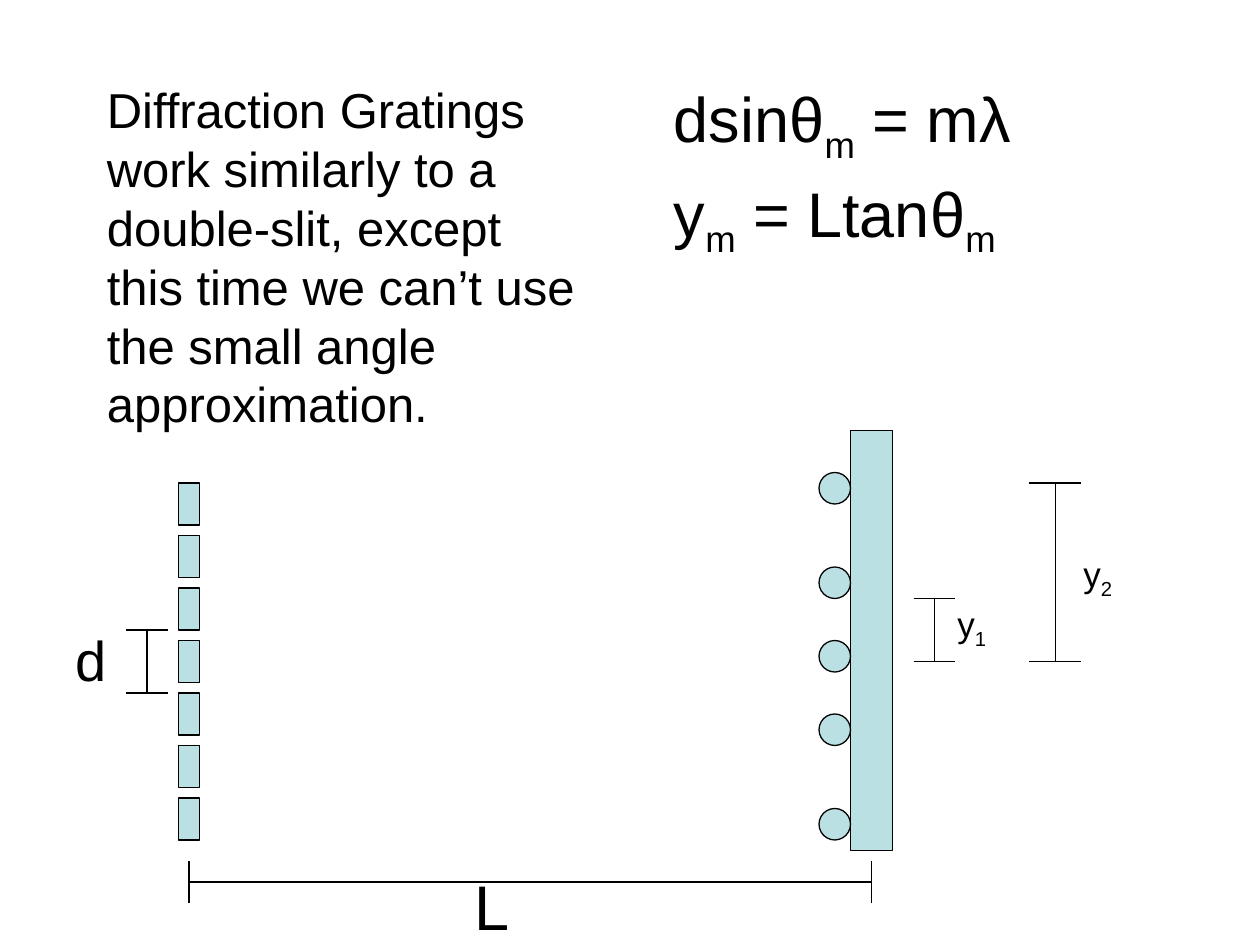
from lxml import etree
from pptx import Presentation
from pptx.dml.color import RGBColor
from pptx.enum.shapes import MSO_CONNECTOR, MSO_SHAPE
from pptx.enum.text import MSO_AUTO_SIZE
from pptx.oxml.ns import qn
from pptx.util import Pt

PX = 7620
BLACK = RGBColor(0x00, 0x00, 0x00)
PALE_TEAL = RGBColor(0xBB, 0xE0, 0xE3)
RECTANGLE = MSO_SHAPE.RECTANGLE
OVAL = MSO_SHAPE.OVAL
STRAIGHT = MSO_CONNECTOR.STRAIGHT
FIT_SHAPE = MSO_AUTO_SIZE.SHAPE_TO_FIT_TEXT


def add_text(box, size, runs):
    text_box = slide.shapes.add_textbox(*[value * PX for value in box])
    frame = text_box.text_frame
    frame.word_wrap = True
    frame.auto_size = FIT_SHAPE
    paragraph = frame.paragraphs[0]
    space_before = etree.SubElement(paragraph._p.get_or_add_pPr(), qn("a:spcBef"))
    etree.SubElement(space_before, qn("a:spcPct")).set("val", "50000")
    for text, is_subscript in runs:
        run = paragraph.add_run()
        run.text = text
        run.font.name = "Arial"
        run.font.size = Pt(size)
        run.font.color.rgb = BLACK
        if is_subscript:
            run.font._element.set("baseline", "-25000")


def add_body(kind, left, top, width, height):
    shape = slide.shapes.add_shape(kind, left * PX, top * PX, width * PX, height * PX)
    shape.shadow.inherit = False
    shape.fill.solid()
    shape.fill.fore_color.rgb = PALE_TEAL
    shape.line.color.rgb = BLACK
    shape.line.width = Pt(0.75)


presentation = Presentation()
presentation.slide_width = 1200 * PX
presentation.slide_height = 900 * PX
slide = presentation.slides.add_slide(presentation.slide_layouts[6])

for slit in range(7):
    add_body(RECTANGLE, 170, 460 + 50 * slit, 20, 40)

add_body(RECTANGLE, 810, 410, 40, 400)
for spot_top in (450, 540, 610, 680, 770):
    add_body(OVAL, 780, spot_top, 30, 30)

dimensions = [
    [(140, 600, 140, 660), (120, 600, 160, 600), (120, 660, 160, 660)],
    [(180, 840, 830, 840), (180, 860, 180, 820), (830, 860, 830, 820)],
    [(890, 570, 890, 630), (870, 570, 910, 570), (870, 630, 910, 630)],
    [(1005, 460, 1005, 630), (980, 460, 1030, 460), (980, 630, 1030, 630)],
]
for dimension in dimensions:
    group = slide.shapes.add_group_shape()
    for ends in dimension:
        connector = group.shapes.add_connector(STRAIGHT, *[value * PX for value in ends])
        connector.line.color.rgb = BLACK
        connector.line.width = Pt(0.75)
        etree.SubElement(connector._element.spPr, qn("a:effectLst"))

labels = [
    ((90, 70, 470, 348), 28, [
        ("Diffraction Gratings work similarly to a double-slit, except this time "
         "we can’t use the small angle approximation.", False)]),
    ((630, 70, 570, 84), 36, [("dsinθ", False), ("m", True), (" = mλ", False)]),
    ((630, 160, 570, 84), 36, [
        ("y", False), ("m", True), (" = Ltanθ", False), ("m", True)]),
    ((60, 590, 50, 76), 32, [("d", False)]),
    ((440, 820, 140, 84), 36, [("L", False)]),
    ((900, 568, 80, 52), 20, [("y", False), ("1", True)]),
    ((1020, 520, 80, 52), 20, [("y", False), ("2", True)]),
]
for box, size, runs in labels:
    add_text(box, size, runs)

presentation.save("out.pptx")
